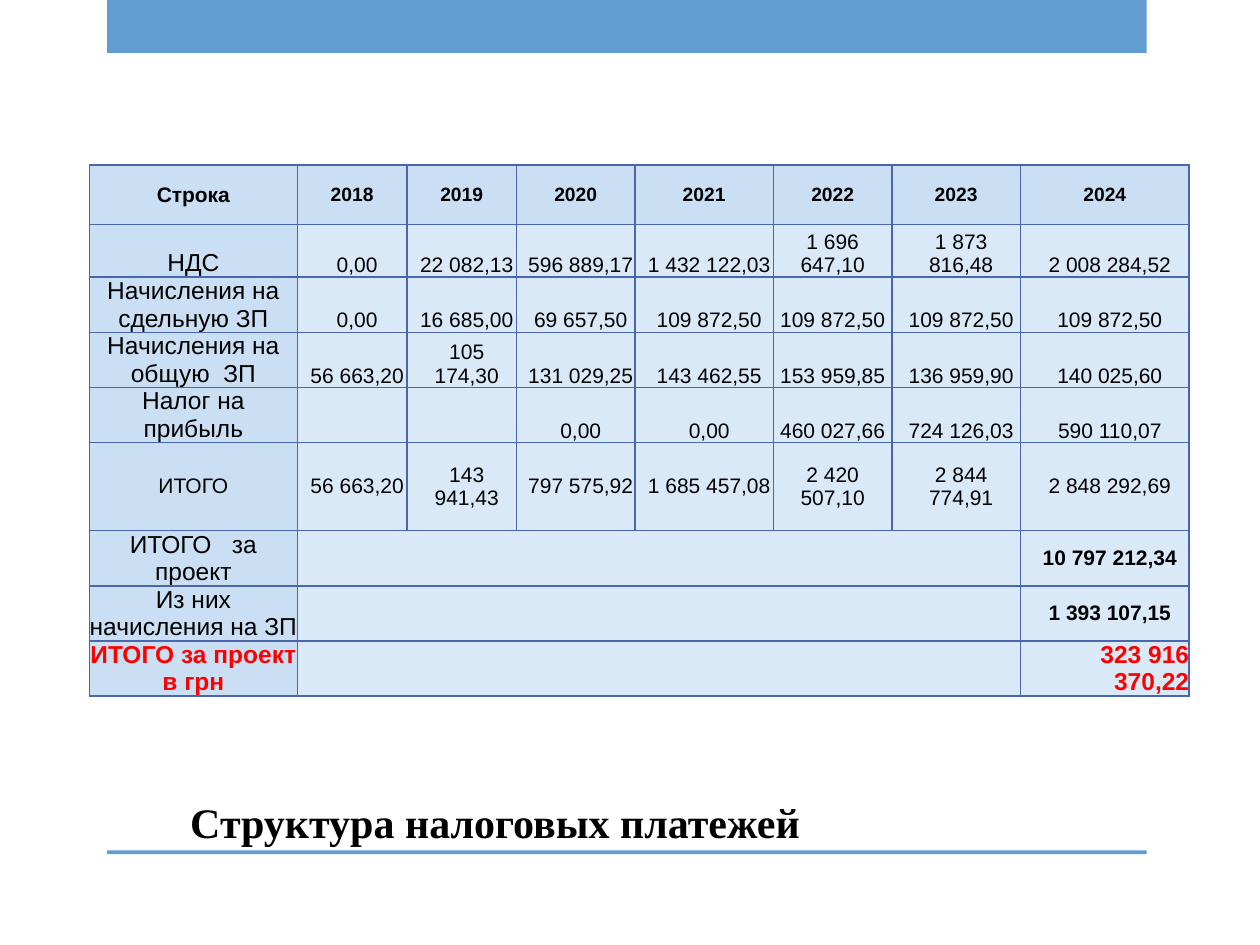
from dataclasses import dataclass

from lxml.etree import SubElement
from pptx import Presentation
from pptx.dml.color import RGBColor
from pptx.enum.shapes import MSO_SHAPE
from pptx.enum.text import MSO_ANCHOR, MSO_AUTO_SIZE, PP_ALIGN
from pptx.oxml.ns import qn
from pptx.slide import Slide
from pptx.table import Table, _Cell
from pptx.text.text import TextFrame
from pptx.util import Inches, Pt

WIDE, TALL = Inches(10), Inches(7.5)
BLUE, EDGE, HEAD, BODY = "629DD1", "4A66AC", "CADFF4", "DAE9F8"
BLACK, RED = "000000", "FF0000"
MID, LOW = MSO_ANCHOR.MIDDLE, MSO_ANCHOR.BOTTOM


@dataclass
class Box:
    left: float
    top: float
    width: float
    height: float

    def place(self) -> tuple:
        return across(self.left), down(self.top), across(self.width), down(self.height)


@dataclass
class Row:
    height: float
    label: str
    values: list
    anchor: MSO_ANCHOR = LOW
    size: int = 14


@dataclass
class Total:
    height: float
    label: str
    value: str
    color: str = BLACK
    size: int = 12
    bold: bool = False
    align: PP_ALIGN = PP_ALIGN.CENTER


BARS = [Box(8.5, 0, 82.5, 5.6), Box(8.5, 90, 82.5, 0.4)]
TITLE = Box(9.1, 83.6, 83.5, 6.67)
GRID = Box(7.1, 17.47, 110.0 - 7.1 - 14.6, 46.4)
COLS = [16.5, 8.7, 8.7, 9.4, 11, 9.4, 10.2, 13.4]
YEARS = Row(6.27, "Строка", [str(year) for year in range(2018, 2025)], MID, 12)
ROWS = [
    Row(5.6, "НДС", ["0,00", "22 082,13", "596 889,17", "1 432 122,03",
                     "1 696 647,10", "1 873 816,48", "2 008 284,52"]),
    Row(4.93, "Начисления на сдельную ЗП",
        ["0,00", "16 685,00", "69 657,50"] + ["109 872,50"] * 4),
    Row(2.53, "Начисления на общую  ЗП",
        ["56 663,20", "105 174,30", "131 029,25", "143 462,55",
         "153 959,85", "136 959,90", "140 025,60"]),
    Row(4.93, "Налог на прибыль", ["", "", "0,00", "0,00",
                                   "460 027,66", "724 126,03", "590 110,07"]),
    Row(9.33, "ИТОГО", ["56 663,20", "143 941,43", "797 575,92", "1 685 457,08",
                        "2 420 507,10", "2 844 774,91", "2 848 292,69"], MID, 12),
]
TOTALS = [
    Total(4.4, "ИТОГО   за проект", "10 797 212,34"),
    Total(4.13, "Из них начисления на ЗП", "1 393 107,15"),
    Total(4.27, "ИТОГО за проект в грн", "323 916 370,22", RED, 14, True, PP_ALIGN.RIGHT),
]


def across(share: float) -> int:
    return round(WIDE * share / 100)


def down(share: float) -> int:
    return round(TALL * share / 100)


def paint(color: str) -> RGBColor:
    return RGBColor.from_string(color)


def write(frame: TextFrame, text: str, size: float = 12, bold: bool = False,
          color: str = BLACK, face: str = "Arial", align: PP_ALIGN = PP_ALIGN.CENTER,
          left: float = 0, first: float = 0) -> None:
    para = frame.paragraphs[0]
    para.alignment = align
    props = para._p.get_or_add_pPr()
    props.set("marL", str(Inches(left)))
    props.set("indent", str(Inches(first)))
    run = para.add_run()
    run.text = text
    run.font.size, run.font.bold, run.font.name = Pt(size), bold, face
    run.font.color.rgb = paint(color)


def frame_cell(cell: _Cell, color: str) -> None:
    cell.margin_left = cell.margin_right = cell.margin_top = cell.margin_bottom = 0
    props = cell._tc.get_or_add_tcPr()
    for side in ("lnL", "lnR", "lnT", "lnB"):
        line = SubElement(props, qn(f"a:{side}"), w=str(Pt(1)))
        fill = SubElement(line, qn("a:solidFill"))
        SubElement(fill, qn("a:srgbClr"), val=EDGE)
    cell.fill.solid()
    cell.fill.fore_color.rgb = paint(color)


def fill_cell(cell: _Cell, text: str, anchor: MSO_ANCHOR, **style) -> None:
    cell.vertical_anchor = anchor
    if text:
        write(cell.text_frame, text, **style)


def draw_years(table: Table) -> None:
    for col, text in enumerate([YEARS.label, *YEARS.values]):
        fill_cell(table.cell(0, col), text, MID, size=11 if col else YEARS.size, bold=True)


def draw_row(table: Table, index: int, row: Row) -> None:
    fill_cell(table.cell(index, 0), row.label, row.anchor, size=row.size)
    for col, text in enumerate(row.values, 1):
        fill_cell(table.cell(index, col), text, row.anchor, left=0 if col == 5 else 0.08)


def draw_total(table: Table, index: int, total: Total) -> None:
    last = len(COLS) - 1
    fill_cell(table.cell(index, 0), total.label, MID, size=14,
              bold=total.bold, color=total.color)
    table.cell(index, 1).merge(table.cell(index, last - 1))
    fill_cell(table.cell(index, last), total.value, MID, size=total.size, bold=True,
              color=total.color, align=total.align, left=0.04, first=0.04)


def draw_table(slide: Slide) -> None:
    rows = [YEARS, *ROWS, *TOTALS]
    table = slide.shapes.add_table(len(rows), len(COLS), *GRID.place()).table
    for col, width in zip(table.columns, COLS):
        col.width = across(width)
    for index, row in enumerate(rows):
        table.rows[index].height = down(row.height)
        for col in range(len(COLS)):
            frame_cell(table.cell(index, col), BODY if index and col else HEAD)
    draw_years(table)
    for index, row in enumerate(ROWS, 1):
        draw_row(table, index, row)
    for index, total in enumerate(TOTALS, 1 + len(ROWS)):
        draw_total(table, index, total)


def draw_bar(slide: Slide, box: Box) -> None:
    bar = slide.shapes.add_shape(MSO_SHAPE.RECTANGLE, *box.place())
    bar.shadow.inherit = False
    bar.fill.solid()
    bar.fill.fore_color.rgb = paint(BLUE)
    bar.line.fill.background()


def draw_title(slide: Slide) -> None:
    title = slide.shapes.title
    title.left, title.top, title.width, title.height = TITLE.place()
    frame = title.text_frame
    frame.auto_size, frame.word_wrap = MSO_AUTO_SIZE.NONE, True
    frame.vertical_anchor = MID
    write(frame, "Структура налоговых платежей", size=24, bold=True,
          face="Times New Roman", align=PP_ALIGN.JUSTIFY, first=0.5)


def main() -> None:
    deck = Presentation()
    deck.slide_width, deck.slide_height = WIDE, TALL
    slide = deck.slides.add_slide(deck.slide_layouts[5])
    for box in BARS:
        draw_bar(slide, box)
    draw_title(slide)
    draw_table(slide)
    deck.save("out.pptx")


if __name__ == "__main__":
    main()
